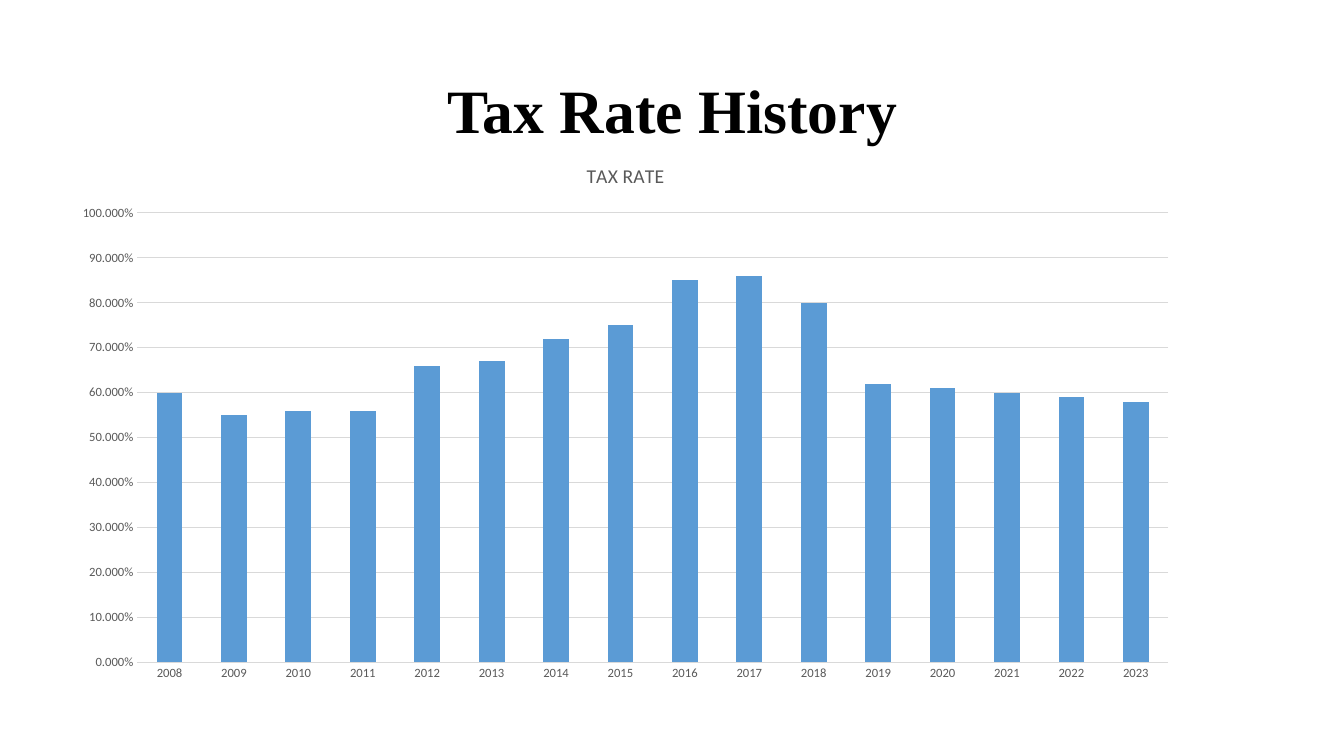
import pptx
import pptx.util
import pptx.oxml
import pptx.chart.data
import pptx.dml.color
import pptx.enum.chart
import pptx.enum.text
from pptx.oxml.ns import qn

# Content
TITLE = "Tax Rate History"
SERIES_NAME = "TAX RATE"
TAX_RATES = {
    "2008": 0.6, "2009": 0.55, "2010": 0.56, "2011": 0.56,
    "2012": 0.66, "2013": 0.67, "2014": 0.72, "2015": 0.75,
    "2016": 0.85, "2017": 0.86, "2018": 0.8, "2019": 0.62,
    "2020": 0.61, "2021": 0.6, "2022": 0.59, "2023": 0.58,
}
COLORS = {"title": "000000", "label": "595959", "grid": "D9D9D9",
          "bar": "5B9BD5", "background": "FFFFFF"}
TITLE_AREA = (0.92, 0.4, 11.5, 1.45)
CHART_AREA = (0.6, 1.41, 11.21, 5.45)
# Plot area as fractions of the chart
PLOT_AREA = {"x": 0.068, "y": 0.129, "w": 0.912, "h": 0.818}


def color(name):
    return pptx.dml.color.RGBColor.from_string(COLORS[name])


def inches(area):
    return [pptx.util.Inches(length) for length in area]


def style_font(font, name, size, color_name, bold=False):
    font.name = name
    font.size = pptx.util.Pt(size)
    font.bold = bold
    font.color.rgb = color(color_name)


def add_title(page):
    box = page.shapes.add_textbox(*inches(TITLE_AREA))
    frame = box.text_frame
    frame.word_wrap = True
    frame.vertical_anchor = pptx.enum.text.MSO_ANCHOR.MIDDLE
    frame.text = TITLE
    para = frame.paragraphs[0]
    para.alignment = pptx.enum.text.PP_ALIGN.CENTER
    para.line_spacing = 0.9
    style_font(para.runs[0].font, "Times New Roman", 44, "title", bold=True)


def place_plot(chart):
    plot_area = chart._chartSpace.chart.plotArea
    for old_layout in plot_area.findall(qn("c:layout")):
        plot_area.remove(old_layout)
    modes = '<c:layoutTarget val="inner"/><c:xMode val="edge"/><c:yMode val="edge"/>'
    sizes = "".join(f'<c:{key} val="{value}"/>' for key, value in PLOT_AREA.items())
    plot_area.insert(0, pptx.oxml.parse_xml(
        '<c:layout xmlns:c="http://schemas.openxmlformats.org/drawingml/2006/chart">'
        f"<c:manualLayout>{modes}{sizes}</c:manualLayout></c:layout>"))


def add_rate_chart(page):
    data = pptx.chart.data.CategoryChartData(number_format="0.000%")
    data.categories = list(TAX_RATES)
    data.add_series(SERIES_NAME, list(TAX_RATES.values()))
    chart = page.shapes.add_chart(
        pptx.enum.chart.XL_CHART_TYPE.COLUMN_CLUSTERED, *inches(CHART_AREA), data).chart
    style_font(chart.font, "Calibri", 10, "title")
    chart.has_legend = False

    # Chart title
    chart.has_title = True
    chart.chart_title.include_in_layout = False
    heading = chart.chart_title.text_frame
    heading.text = SERIES_NAME
    style_font(heading.paragraphs[0].runs[0].font, "Calibri", 14, "label")

    # Columns
    plot = chart.plots[0]
    plot.gap_width = 150
    plot.vary_by_categories = False
    fill = plot.series[0].format.fill
    fill.solid()
    fill.fore_color.rgb = color("bar")

    # Axes
    for axis in (chart.category_axis, chart.value_axis):
        axis.major_tick_mark = pptx.enum.chart.XL_TICK_MARK.NONE
        axis.minor_tick_mark = pptx.enum.chart.XL_TICK_MARK.NONE
        axis.format.line.fill.background()
        style_font(axis.tick_labels.font, "Calibri", 9, "label")
    rate_axis = chart.value_axis
    rate_axis.minimum_scale = 0
    rate_axis.maximum_scale = 1
    rate_axis.major_unit = 0.1
    rate_axis.tick_labels.number_format = "0.000%"
    rate_axis.tick_labels.number_format_is_linked = False
    rate_axis.has_major_gridlines = True
    grid = rate_axis.major_gridlines.format.line
    grid.width = pptx.util.Pt(0.75)
    grid.color.rgb = color("grid")
    place_plot(chart)


def main():
    deck = pptx.Presentation()
    deck.slide_width = pptx.util.Inches(13.33)
    deck.slide_height = pptx.util.Inches(7.5)
    page = deck.slides.add_slide(deck.slide_layouts[6])
    page.background.fill.solid()
    page.background.fill.fore_color.rgb = color("background")
    add_title(page)
    add_rate_chart(page)
    deck.save("out.pptx")


if __name__ == "__main__":
    main()
